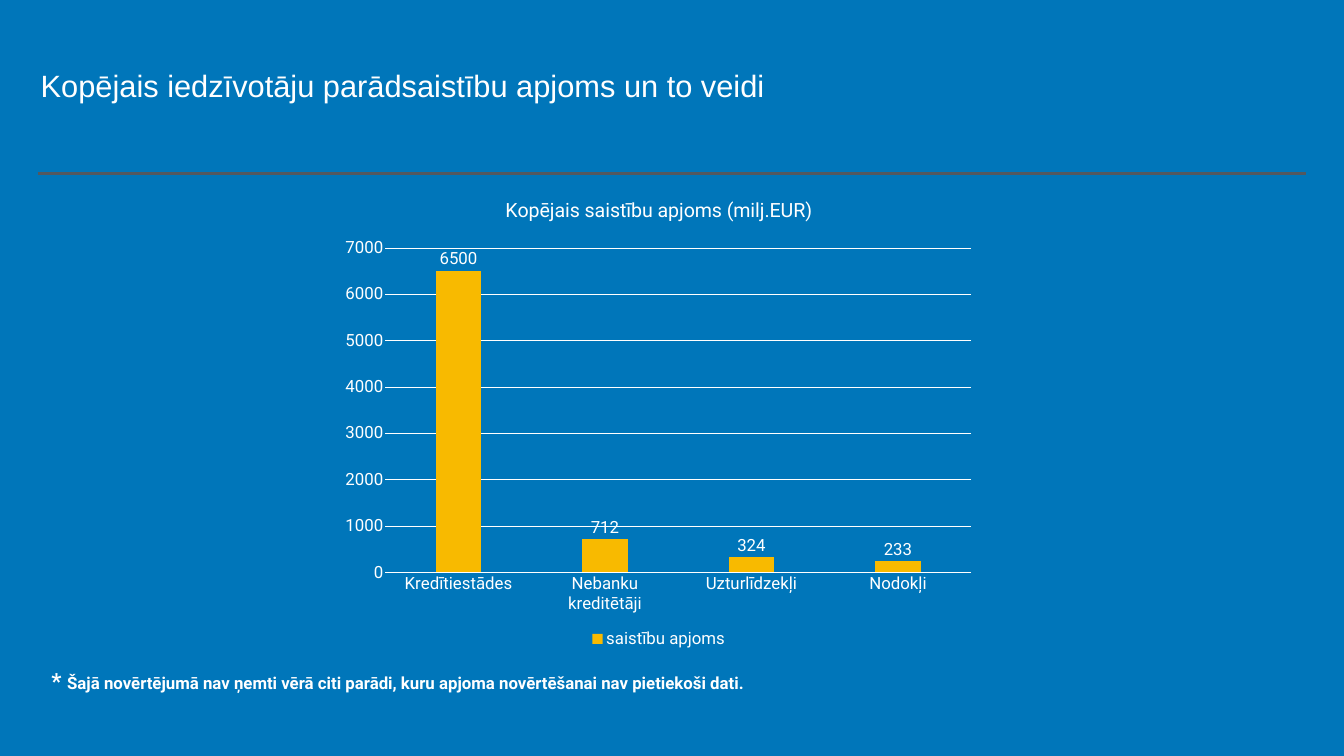
"""Build a slide showing household debt by type in a column chart."""
from lxml import etree
from pptx import Presentation
from pptx.chart.data import CategoryChartData
from pptx.dml.color import RGBColor
from pptx.enum import chart as charts, shapes, text
from pptx.oxml import ns
from pptx.util import Cm, Pt

BLUE = RGBColor(0x00, 0x76, 0xBA)
WHITE = RGBColor(0xFF, 0xFF, 0xFF)
GREY = RGBColor(0x53, 0x58, 0x5F)
GOLD = RGBColor(0xF8, 0xBA, 0x00)
LEFT, RIGHT = 1.9, 65.81
PLOT_LAYOUT = {"layoutTarget": "inner", "xMode": "edge", "yMode": "edge",
               "x": 0.08, "y": 0.14, "w": 0.9, "h": 0.69}


def format_font(font, name="Roboto", size=24, bold=False):
    """Give a font its face, size, weight and the white colour."""
    font.name, font.size, font.bold = name, Pt(size), bold
    font.color.rgb = WHITE


def add_text(paragraph, words, **font_format):
    """Append a formatted run to a paragraph."""
    run = paragraph.add_run()
    run.text = words
    format_font(run.font, **font_format)


def prepare_frame(shape, box):
    """Place a text shape in its box and return its first paragraph."""
    shape.left, shape.top, shape.width, shape.height = map(Cm, box)
    frame = shape.text_frame
    frame.word_wrap = True
    frame.auto_size = text.MSO_AUTO_SIZE.NONE
    frame.vertical_anchor = text.MSO_ANCHOR.MIDDLE
    frame.margin_left = frame.margin_right = Cm(0.15)
    frame.margin_top = frame.margin_bottom = Cm(0.15)
    paragraph = frame.paragraphs[0]
    paragraph.alignment = text.PP_ALIGN.LEFT
    return paragraph


def add_header(slide, box):
    """Fill the title placeholder and draw the rule beneath it."""
    paragraph = prepare_frame(slide.shapes.title, box)
    add_text(paragraph, "Kopējais iedzīvotāju parādsaistību apjoms un to veidi",
             name="Arial", size=44)
    rule_top = Cm(box[1] + 5.53)
    rule = slide.shapes.add_connector(
        shapes.MSO_CONNECTOR.STRAIGHT, Cm(LEFT), rule_top, Cm(RIGHT), rule_top)
    rule.line.color.rgb = GREY
    rule.line.width = Pt(4)
    properties = rule._element.spPr
    etree.SubElement(properties, ns.qn("a:effectLst"))


def set_plot_layout(chart):
    """Fix the inner plot area as fractions of the chart box."""
    plot_area = chart._chartSpace.chart.plotArea
    for old_layout in plot_area.findall(ns.qn("c:layout")):
        plot_area.remove(old_layout)
    layout = etree.Element(ns.qn("c:layout"))
    manual = etree.SubElement(layout, ns.qn("c:manualLayout"))
    for key, value in PLOT_LAYOUT.items():
        etree.SubElement(manual, ns.qn(f"c:{key}")).set("val", str(value))
    plot_area.insert(0, layout)


def format_axes(chart):
    """Style both axes and the horizontal gridlines."""
    for axis in (chart.category_axis, chart.value_axis):
        axis.major_tick_mark = axis.minor_tick_mark = charts.XL_TICK_MARK.NONE
        format_font(axis.tick_labels.font)
    values = chart.value_axis
    values.minimum_scale, values.maximum_scale, values.major_unit = 0, 7000, 1000
    values.format.line.fill.background()
    chart.category_axis.has_major_gridlines = False
    for lined in (chart.category_axis, values.major_gridlines):
        lined.format.line.color.rgb = WHITE
        lined.format.line.width = Pt(0.75)


def add_debt_chart(slide, box):
    """Add the column chart of debt totals."""
    data = CategoryChartData()
    data.categories = ["Kredītiestādes", "Nebanku kreditētāji",
                       "Uzturlīdzekļi", "Nodokļi"]
    data.add_series("saistību apjoms", (6500, 712, 324, 233))
    chart = slide.shapes.add_chart(
        charts.XL_CHART_TYPE.COLUMN_CLUSTERED, *map(Cm, box), data).chart
    format_font(chart.font)
    chart.has_title = True
    add_text(chart.chart_title.text_frame.paragraphs[0],
             "Kopējais saistību apjoms (milj.EUR)", size=28)
    chart.has_legend = True
    chart.legend.position = charts.XL_LEGEND_POSITION.BOTTOM
    chart.legend.include_in_layout = False
    format_font(chart.legend.font)
    format_axes(chart)
    set_plot_layout(chart)

    plot = chart.plots[0]
    plot.gap_width, plot.overlap = 219, -27
    plot.vary_by_categories = False
    series = plot.series[0]
    series.format.fill.solid()
    series.format.fill.fore_color.rgb = GOLD
    labels = series.data_labels
    labels.show_value = True
    labels.position = charts.XL_LABEL_POSITION.OUTSIDE_END
    format_font(labels.font)


def add_footnote(slide, box):
    """Add the starred remark on what the estimate leaves out."""
    shape = slide.shapes.add_textbox(*map(Cm, box))
    paragraph = prepare_frame(shape, box)
    add_text(paragraph, "* ", size=32, bold=True)
    add_text(paragraph, "Šajā novērtējumā nav ņemti vērā citi parādi, "
             "kuru apjoma novērtēšanai nav pietiekoši dati.", bold=True)


def main():
    """Assemble and save the presentation."""
    presentation = Presentation()
    presentation.slide_width, presentation.slide_height = Cm(67.74), Cm(38.1)
    slide = presentation.slides.add_slide(presentation.slide_layouts[5])
    slide.background.fill.solid()
    slide.background.fill.fore_color.rgb = BLUE
    add_header(slide, (LEFT, 3.23, 39.88, 2.16))
    add_debt_chart(slide, (16.79, 9.17, 32.82, 23.7))
    add_footnote(slide, (2.44, 33.45, 61.47, 1.65))
    presentation.save("out.pptx")


if __name__ == "__main__":
    main()
